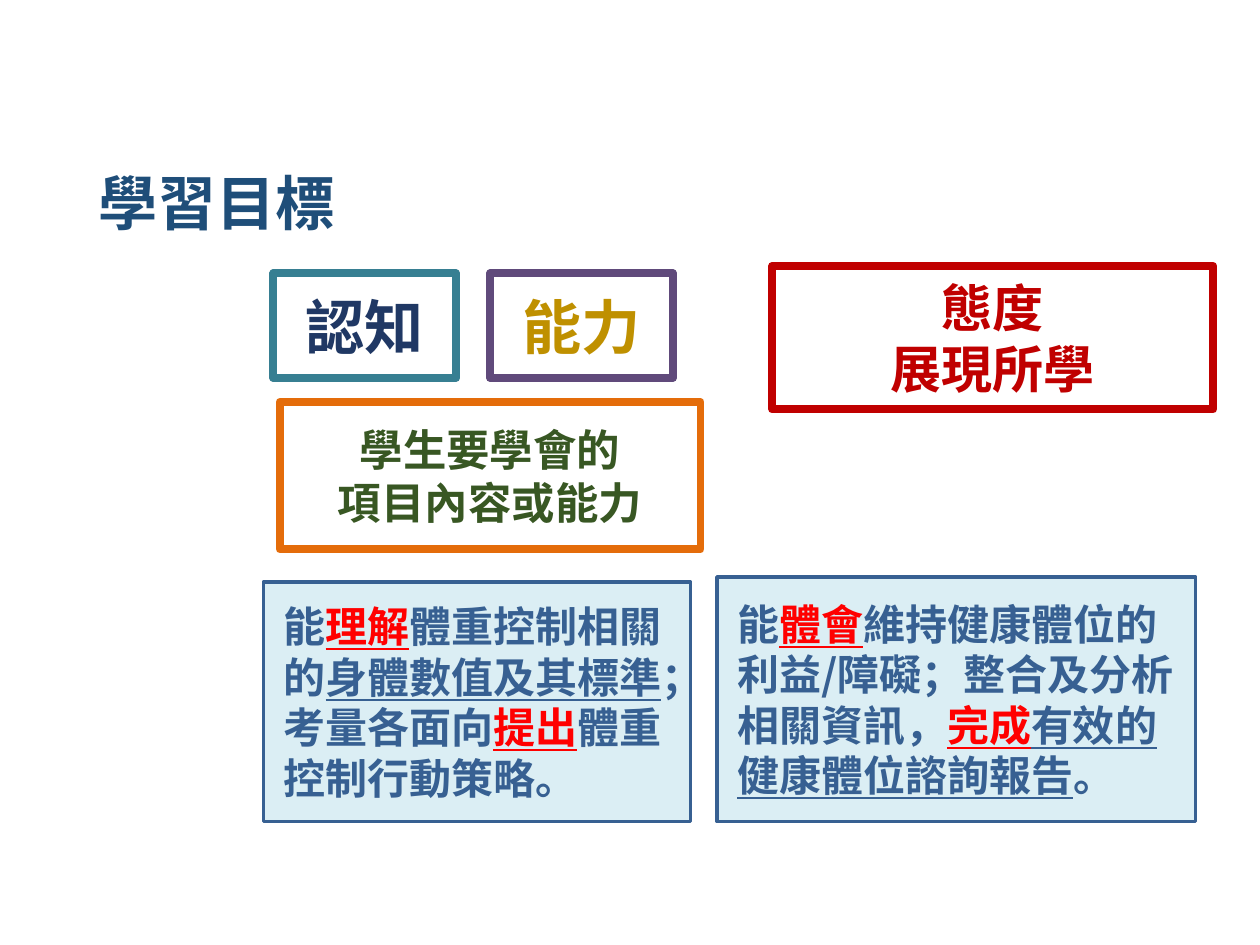
from dataclasses import dataclass
from typing import Optional

from lxml.etree import SubElement
from pptx import Presentation
from pptx.dml.color import RGBColor
from pptx.enum.shapes import MSO_SHAPE
from pptx.enum.text import MSO_ANCHOR, MSO_AUTO_SIZE, PP_ALIGN
from pptx.oxml.ns import qn
from pptx.util import Emu, Inches, Pt

FONT = "Noto Sans CJK SC"
COLUMNS, ROWS = 100, 75
COLORS = {
    "title": "1F4E79", "teal": "377F92", "navy": "203864",
    "purple": "604A7B", "gold": "BF9000", "orange": "E46C0A",
    "green": "385723", "crimson": "C00000", "red": "FF0000",
    "blue": "376092", "pale": "DBEEF4",
}


@dataclass
class Span:
    text: str
    color: str
    underline: bool = False


@dataclass
class Box:
    """Position and size are in grid columns and rows."""
    col: float
    row: float
    cols: float
    rows: float
    line: str
    size: float
    paragraphs: list[list[Span]]
    line_width: float = 4.5
    fill: Optional[str] = None
    align: PP_ALIGN = PP_ALIGN.CENTER
    indent: float = 0


def heading(col: float, row: float, cols: float, rows: float, line: str,
            size: float, color: str, *lines: str) -> Box:
    return Box(col, row, cols, rows, line, size, [[Span(t, color)] for t in lines])


def goal(col: float, row: float, cols: float, rows: float, *spans: Span) -> Box:
    return Box(col, row, cols, rows, "blue", 24, [list(spans)], line_width=2,
               fill="pale", align=PP_ALIGN.LEFT, indent=0.1)


def plain(text: str) -> Span:
    return Span(text, "blue")


def marked(text: str) -> Span:
    return Span(text, "blue", True)


def verb(text: str) -> Span:
    return Span(text, "red", True)


BOXES = [
    heading(21.7, 21.7, 14.5, 8.3, "teal", 33.8, "navy", "認知"),
    heading(22.2, 31.9, 33.4, 11.7, "orange", 24.8, "green", "學生要學會的", "項目內容或能力"),
    heading(61.3, 21.1, 35, 11.4, "crimson", 29.2, "crimson", "態度", "展現所學"),
    heading(38.9, 21.7, 14.5, 8.3, "purple", 33.8, "gold", "能力"),
    goal(20.9, 46.2, 33.9, 19,
         plain("能"), verb("理解"), plain("體重控制相關的"), marked("身體數值及其標準"),
         plain("；考量各面向"), verb("提出"), plain("體重控制行動策略。")),
    goal(56.9, 45.8, 38, 19.4,
         plain("能"), verb("體會"), plain("維持健康體位的利益/障礙；整合及分析相關資訊，"),
         verb("完成"), marked("有效的健康體位諮詢報告"), plain("。")),
]


def rgb(name: str) -> RGBColor:
    return RGBColor.from_string(COLORS[name])


def place(sp, prs, col: float, row: float, cols: float, rows: float) -> None:
    col_width, row_height = prs.slide_width / COLUMNS, prs.slide_height / ROWS
    sp.left, sp.width = Emu(round(col * col_width)), Emu(round(cols * col_width))
    sp.top, sp.height = Emu(round(row * row_height)), Emu(round(rows * row_height))


def set_frame(tf, anchor: MSO_ANCHOR, wrap: bool) -> None:
    tf.margin_left = tf.margin_right = Inches(0.06)
    tf.margin_top = tf.margin_bottom = Inches(0.03)
    tf.vertical_anchor = anchor
    tf.word_wrap = wrap


def add_span(p, span: Span, size: float) -> None:
    r = p.add_run()
    r.text = span.text
    r.font.size = Pt(size)
    r.font.bold = True
    r.font.underline = span.underline
    r.font.color.rgb = rgb(span.color)
    r.font.name = FONT
    SubElement(r.font._element, qn("a:ea")).set("typeface", FONT)


def add_title(prs, slide) -> None:
    title = slide.shapes.title
    place(title, prs, 7.2, 12.9, 20.1, 6.2)
    tf = title.text_frame
    set_frame(tf, MSO_ANCHOR.TOP, False)
    tf.auto_size = MSO_AUTO_SIZE.SHAPE_TO_FIT_TEXT
    p = tf.paragraphs[0]
    p.alignment = PP_ALIGN.LEFT
    add_span(p, Span("學習目標", "title"), 33.8)


def add_box(prs, slide, box: Box) -> None:
    sp = slide.shapes.add_shape(MSO_SHAPE.RECTANGLE, 0, 0, 0, 0)
    place(sp, prs, box.col, box.row, box.cols, box.rows)
    sp.shadow.inherit = False
    if box.fill:
        sp.fill.solid()
        sp.fill.fore_color.rgb = rgb(box.fill)
    else:
        sp.fill.background()
    sp.line.color.rgb = rgb(box.line)
    sp.line.width = Pt(box.line_width)
    SubElement(sp.line._get_or_add_ln(), qn("a:round"))
    tf = sp.text_frame
    set_frame(tf, MSO_ANCHOR.MIDDLE, True)
    for i, spans in enumerate(box.paragraphs):
        p = tf.add_paragraph() if i else tf.paragraphs[0]
        p.alignment = box.align
        if box.indent:
            p._p.get_or_add_pPr().set("marL", str(Inches(box.indent)))
        for span in spans:
            add_span(p, span, box.size)


def main() -> None:
    prs = Presentation()
    prs.slide_width, prs.slide_height = Inches(10), Inches(7.5)
    slide = prs.slides.add_slide(prs.slide_layouts[5])
    add_title(prs, slide)
    for box in BOXES:
        add_box(prs, slide, box)
    prs.save("out.pptx")


if __name__ == "__main__":
    main()
